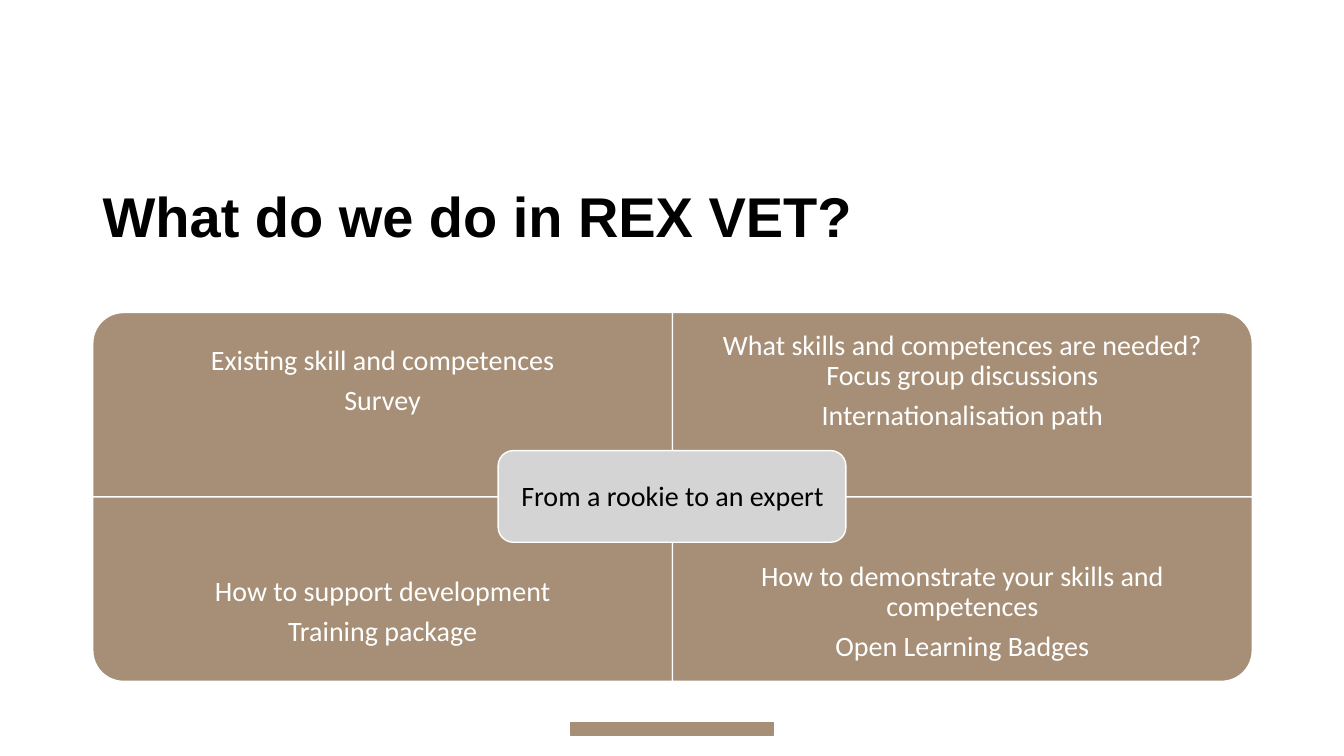
import pptx
import pptx.dml.color
import pptx.enum.shapes
import pptx.enum.text
import pptx.util

Inches = pptx.util.Inches
Pt = pptx.util.Pt
RGBColor = pptx.dml.color.RGBColor
Shape = pptx.enum.shapes.MSO_SHAPE
Align = pptx.enum.text.PP_ALIGN
Anchor = pptx.enum.text.MSO_ANCHOR

BROWN = RGBColor(0xA6, 0x8F, 0x76)
GREY = RGBColor(0xD4, 0xD4, 0xD4)
WHITE = RGBColor(0xFF, 0xFF, 0xFF)
BLACK = RGBColor(0x00, 0x00, 0x00)

LEFT, TOP = 0.92, 3.1
WIDTH, HEIGHT = 5.75, 1.83
LABEL_HEIGHT = 1.37

# column, row, rotation that turns the round corner outwards, paragraphs
QUADRANTS = [
    (0, 0, 270, ["Existing skill and competences", "Survey"]),
    (1, 0, 0, ["What skills and competences are needed? Focus group discussions",
               "Internationalisation path"]),
    (0, 1, 180, ["How to support development", "Training package"]),
    (1, 1, 90, ["How to demonstrate your skills and competences",
                "Open Learning Badges"]),
]


class SlideBuilder:
    def __init__(self, page):
        self.page = page

    def shape(self, kind, left, top, width, height, fill, line, rotation=0):
        """Draw a shape that covers the given area once it is rotated."""
        if rotation % 180:
            left += (width - height) / 2
            top += (height - width) / 2
            width, height = height, width
        shape = self.page.shapes.add_shape(
            kind, Inches(left), Inches(top), Inches(width), Inches(height))
        shape.rotation = rotation
        shape.shadow.inherit = False
        shape.fill.solid()
        shape.fill.fore_color.rgb = fill
        shape.line.color.rgb = line
        shape.line.width = Pt(1)

    def text(self, left, top, width, height, lines, color, inset,
             font="Calibri", size=20, bold=False, align=Align.CENTER, after=7):
        box = self.page.shapes.add_textbox(
            Inches(left), Inches(top), Inches(width), Inches(height))
        frame = box.text_frame
        frame.word_wrap = True
        frame.vertical_anchor = Anchor.MIDDLE
        frame.margin_left = frame.margin_right = Inches(inset)
        frame.margin_top = frame.margin_bottom = Inches(inset)
        for index, line in enumerate(lines):
            para = frame.add_paragraph() if index else frame.paragraphs[0]
            para.alignment = align
            para.line_spacing = 0.9
            para.space_after = Pt(after)
            span = para.add_run()
            span.text = line
            span.font.name = font
            span.font.size = Pt(size)
            span.font.bold = bold
            span.font.color.rgb = color


def main():
    deck = pptx.Presentation()
    deck.slide_width = Inches(13.33)
    deck.slide_height = Inches(7.5)
    builder = SlideBuilder(deck.slides.add_slide(deck.slide_layouts[6]))

    builder.shape(Shape.RECTANGLE, 5.66, 7.17, 2.01, 0.12, BROWN, BROWN)
    builder.text(LEFT, 1.45, 2 * WIDTH, 1.45, ["What do we do in REX VET?"], BLACK,
                 0.1, font="Arial", size=40, bold=True, align=Align.LEFT, after=0)

    for column, row, rotation, lines in QUADRANTS:
        left = LEFT + column * WIDTH
        top = TOP + row * HEIGHT
        builder.shape(Shape.ROUND_1_RECTANGLE, left, top, WIDTH, HEIGHT,
                      BROWN, WHITE, rotation)
        label_top = top + row * (HEIGHT - LABEL_HEIGHT)
        builder.text(left, label_top, WIDTH, LABEL_HEIGHT, lines, WHITE, 0.16)

    builder.shape(Shape.ROUNDED_RECTANGLE, 4.94, 4.47, 3.45, 0.91, GREY, WHITE)
    builder.text(4.99, 4.52, 3.36, 0.82, ["From a rookie to an expert"], BLACK, 0.08)

    deck.save("out.pptx")


if __name__ == "__main__":
    main()
